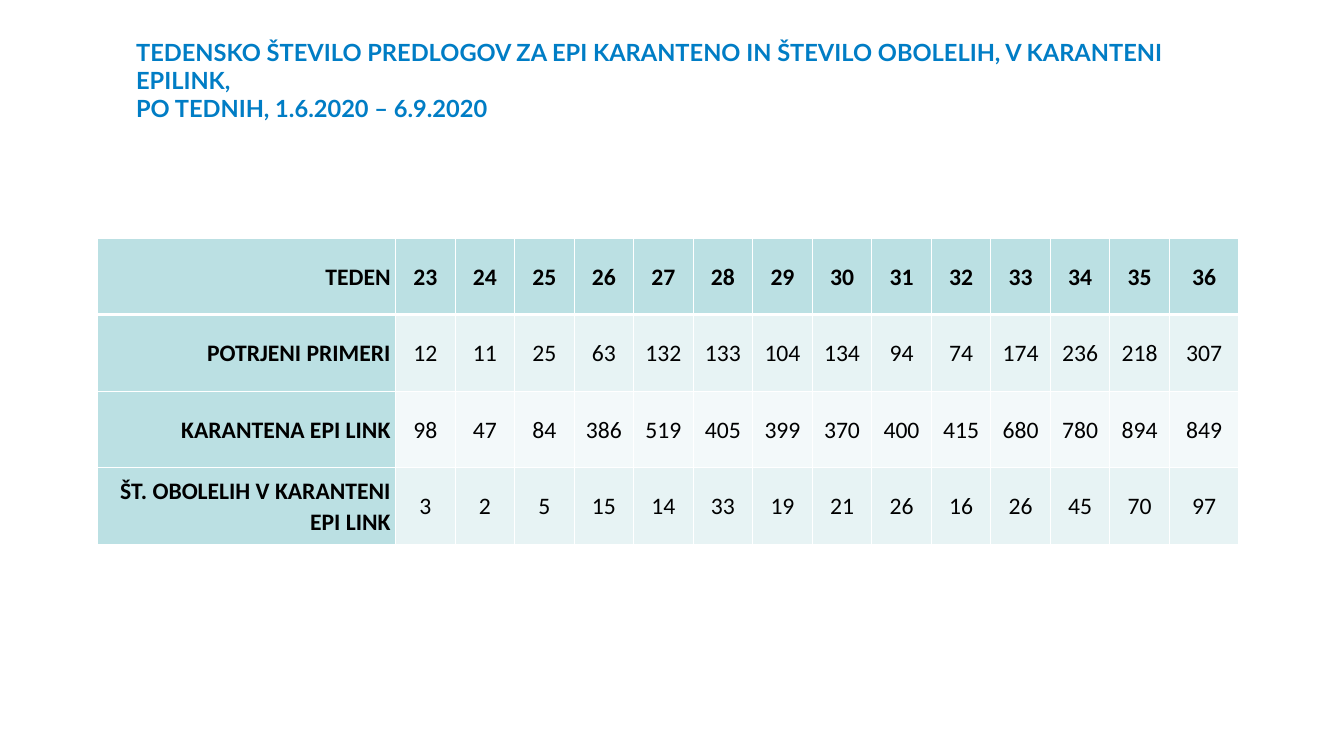
from lxml import etree
from pptx import Presentation
from pptx.dml.color import RGBColor
from pptx.enum.text import MSO_ANCHOR, MSO_AUTO_SIZE, PP_ALIGN
from pptx.oxml.ns import qn
from pptx.util import Pt

PX = 9144
LEFT, CENTER, RIGHT = PP_ALIGN.LEFT, PP_ALIGN.CENTER, PP_ALIGN.RIGHT
MIDDLE, BOTTOM = MSO_ANCHOR.MIDDLE, MSO_ANCHOR.BOTTOM
NO_AUTOFIT = MSO_AUTO_SIZE.NONE
TITLE_BLUE = RGBColor(0x00, 0x7D, 0xC5)
BLACK = RGBColor(0x00, 0x00, 0x00)
WHITE = RGBColor(0xFF, 0xFF, 0xFF)
HEADER_TEAL = RGBColor(0xBB, 0xE0, 0xE3)
BAND_TEAL = RGBColor(0xE7, 0xF3, 0xF4)
BAND_PALE = RGBColor(0xF3, 0xF9, 0xFA)

TITLE_LINES = [
    "TEDENSKO ŠTEVILO PREDLOGOV ZA EPI KARANTENO IN ŠTEVILO OBOLELIH, V KARANTENI EPILINK,",
    "PO TEDNIH, 1.6.2020 – 6.9.2020",
]
WEEKLY_ROWS = [
    ("TEDEN", *range(23, 37)),
    ("POTRJENI PRIMERI", 12, 11, 25, 63, 132, 133, 104, 134, 94, 74, 174, 236, 218, 307),
    ("KARANTENA EPI LINK", 98, 47, 84, 386, 519, 405, 399, 370, 400, 415, 680, 780, 894, 849),
    ("ŠT. OBOLELIH V KARANTENI EPI LINK", 3, 2, 5, 15, 14, 33, 19, 21, 26, 16, 26, 45, 70, 97),
]
COLUMN_WIDTHS = [421] + [84] * 13 + [98]
ROW_HEIGHT = 108


def add_run(paragraph, text, font_name, color, bold):
    run = paragraph.add_run()
    run.text = text
    run.font.name = font_name
    run.font.size = Pt(24)
    run.font.bold = bold
    run.font.color.rgb = color


def add_border(cell, side, points):
    line = etree.SubElement(cell._tc.get_or_add_tcPr(), qn(f"a:{side}"), w=str(Pt(points)))
    fill = etree.SubElement(line, qn("a:solidFill"))
    etree.SubElement(fill, qn("a:srgbClr"), val=str(WHITE))


prs = Presentation()
prs.slide_width = 1896 * PX
prs.slide_height = 1067 * PX
slide = prs.slides.add_slide(prs.slide_layouts[5])

title = slide.shapes.title
title.left, title.top, title.width, title.height = 186 * PX, 53 * PX, 1526 * PX, 126 * PX
heading = title.text_frame
heading.word_wrap = True
heading.auto_size = NO_AUTOFIT
heading.vertical_anchor = BOTTOM
heading.margin_left = heading.margin_right = 6 * PX
heading.margin_top = heading.margin_bottom = 6 * PX
heading_paragraph = heading.paragraphs[0]
heading_paragraph.alignment = LEFT
heading_paragraph.line_spacing = 1.0
for index, line_text in enumerate(TITLE_LINES):
    if index:
        heading_paragraph.add_line_break()
    add_run(heading_paragraph, line_text, "Lato", TITLE_BLUE, True)

weekly_table = slide.shapes.add_table(
    len(WEEKLY_ROWS), len(COLUMN_WIDTHS), 137 * PX, 336 * PX,
    sum(COLUMN_WIDTHS) * PX, len(WEEKLY_ROWS) * ROW_HEIGHT * PX,
).table
for column, width in zip(weekly_table.columns, COLUMN_WIDTHS):
    column.width = width * PX

for row_index, values in enumerate(WEEKLY_ROWS):
    weekly_table.rows[row_index].height = ROW_HEIGHT * PX
    for column_index, value in enumerate(values):
        cell = weekly_table.cell(row_index, column_index)
        is_heading = row_index == 0 or column_index == 0
        add_border(cell, "lnL", 1)
        add_border(cell, "lnR", 1)
        add_border(cell, "lnT", 3 if row_index == 1 else 1)
        add_border(cell, "lnB", 3 if row_index == 0 else 1)
        cell.fill.solid()
        band = BAND_TEAL if row_index % 2 else BAND_PALE
        cell.fill.fore_color.rgb = HEADER_TEAL if is_heading else band
        cell.vertical_anchor = MIDDLE
        cell.margin_left = cell.margin_right = 7 * PX
        cell.margin_top = cell.margin_bottom = 0
        paragraph = cell.text_frame.paragraphs[0]
        paragraph.alignment = CENTER if column_index else RIGHT
        paragraph.line_spacing = 1.07
        add_run(paragraph, str(value), "Calibri", BLACK, is_heading)

prs.save("out.pptx")
